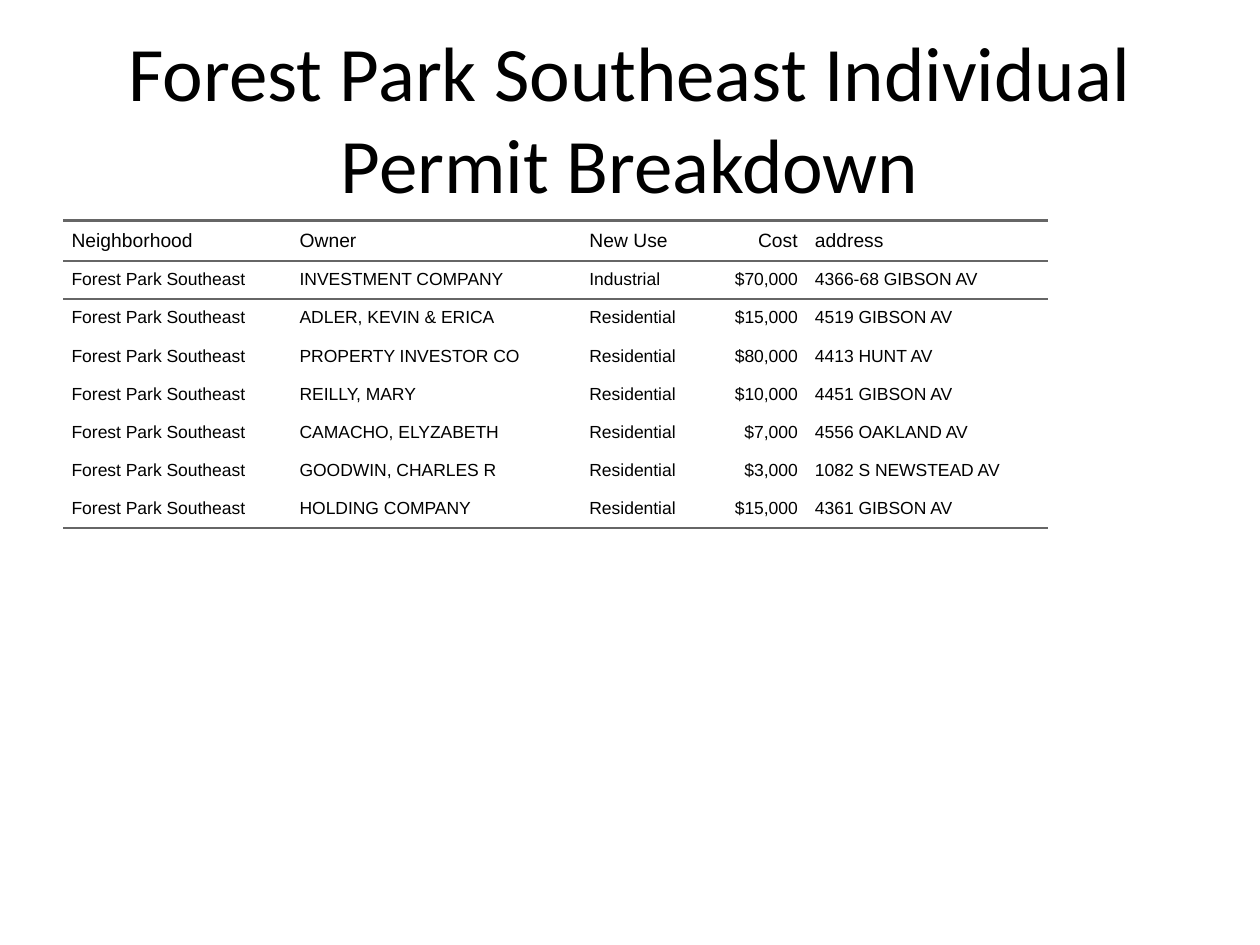
from lxml.etree import SubElement
from pptx import Presentation
from pptx.dml.color import RGBColor
from pptx.enum.text import MSO_ANCHOR, PP_ALIGN
from pptx.oxml.ns import qn
from pptx.util import Inches, Pt

BLACK = RGBColor(0x00, 0x00, 0x00)
RULE_GRAY = RGBColor(0x66, 0x66, 0x66)
NO_GRID_STYLE = "{2D5ABB26-0587-4C30-8999-92F81FD0307C}"
CELL_PAD = Pt(4.9)

NEIGHBORHOOD = "Forest Park Southeast"
HEADER = ("Neighborhood", "Owner", "New Use", "Cost", "address")
COL_WIDTHS = (1.81, 2.3, 1.04, 0.75, 1.92)
COST_COL = HEADER.index("Cost")
PERMITS = [
    ("INVESTMENT COMPANY", "Industrial", "$70,000", "4366-68 GIBSON AV"),
    ("ADLER, KEVIN & ERICA", "Residential", "$15,000", "4519 GIBSON AV"),
    ("PROPERTY INVESTOR CO", "Residential", "$80,000", "4413 HUNT AV"),
    ("REILLY, MARY", "Residential", "$10,000", "4451 GIBSON AV"),
    ("CAMACHO, ELYZABETH", "Residential", "$7,000", "4556 OAKLAND AV"),
    ("GOODWIN, CHARLES R", "Residential", "$3,000", "1082 S NEWSTEAD AV"),
    ("HOLDING COMPANY", "Residential", "$15,000", "4361 GIBSON AV"),
]


def write_text(tf, text, size, font="Arial", color=BLACK,
               align=PP_ALIGN.LEFT, space=0, indent=0):
    p = tf.paragraphs[0]
    p.alignment = align
    p.space_before = p.space_after = Pt(space)
    if indent:
        pPr = p._p.get_or_add_pPr()
        for side in ("marL", "marR"):
            pPr.set(side, str(indent))
        pPr.set("indent", "0")
    r = p.add_run()
    r.text = text
    r.font.size = Pt(size)
    r.font.name = font
    r.font.color.rgb = color


def rule_cell(cell, sides):
    """Draw a gray rule on the given sides, in the order top, bottom."""
    tcPr = cell._tc.get_or_add_tcPr()
    for i, side in enumerate(sides):
        ln = SubElement(tcPr, qn(f"a:ln{side}"), w=str(Pt(1.5)))
        fill = SubElement(ln, qn("a:solidFill"))
        SubElement(fill, qn("a:srgbClr"), val=str(RULE_GRAY))
        tcPr.remove(ln)
        tcPr.insert(i, ln)


def add_title(slide, left, top, width, height):
    tf = slide.shapes.add_textbox(left, top, width, height).text_frame
    tf.word_wrap = True
    tf.vertical_anchor = MSO_ANCHOR.MIDDLE
    write_text(tf, "Forest Park Southeast Individual Permit Breakdown", 44,
               font="Calibri", align=PP_ALIGN.CENTER)


def add_permit_table(slide, left, top, width, row_height):
    rows = [HEADER] + [(NEIGHBORHOOD, *permit) for permit in PERMITS]
    table = slide.shapes.add_table(len(rows), len(HEADER), left, top, width,
                                   row_height * len(rows)).table
    table.first_row = table.horz_banding = False
    table._tbl.tblPr.find(qn("a:tableStyleId")).text = NO_GRID_STYLE
    for col, col_width in zip(table.columns, COL_WIDTHS):
        col.width = Inches(col_width)

    borders = {0: "TB", 1: "T", len(rows) - 1: "B"}
    for i, row in enumerate(rows):
        for j, text in enumerate(row):
            cell = table.cell(i, j)
            cell.fill.background()
            cell.vertical_anchor = MSO_ANCHOR.MIDDLE
            cell.margin_left = cell.margin_right = 0
            cell.margin_top = cell.margin_bottom = CELL_PAD
            write_text(cell.text_frame, text, 11 if i == 0 else 10,
                       align=PP_ALIGN.RIGHT if j == COST_COL else PP_ALIGN.LEFT,
                       space=5, indent=CELL_PAD)
            rule_cell(cell, borders.get(i, ""))


def main():
    prs = Presentation()
    prs.slide_width, prs.slide_height = Inches(10), Inches(7.5)
    slide = prs.slides.add_slide(prs.slide_layouts[6])
    add_title(slide, Inches(0.5), Inches(0.3), Inches(9), Inches(1.25))
    add_permit_table(slide, Inches(0.5), Inches(1.75),
                     Inches(sum(COL_WIDTHS)), Inches(0.25))
    prs.save("out.pptx")


if __name__ == "__main__":
    main()
